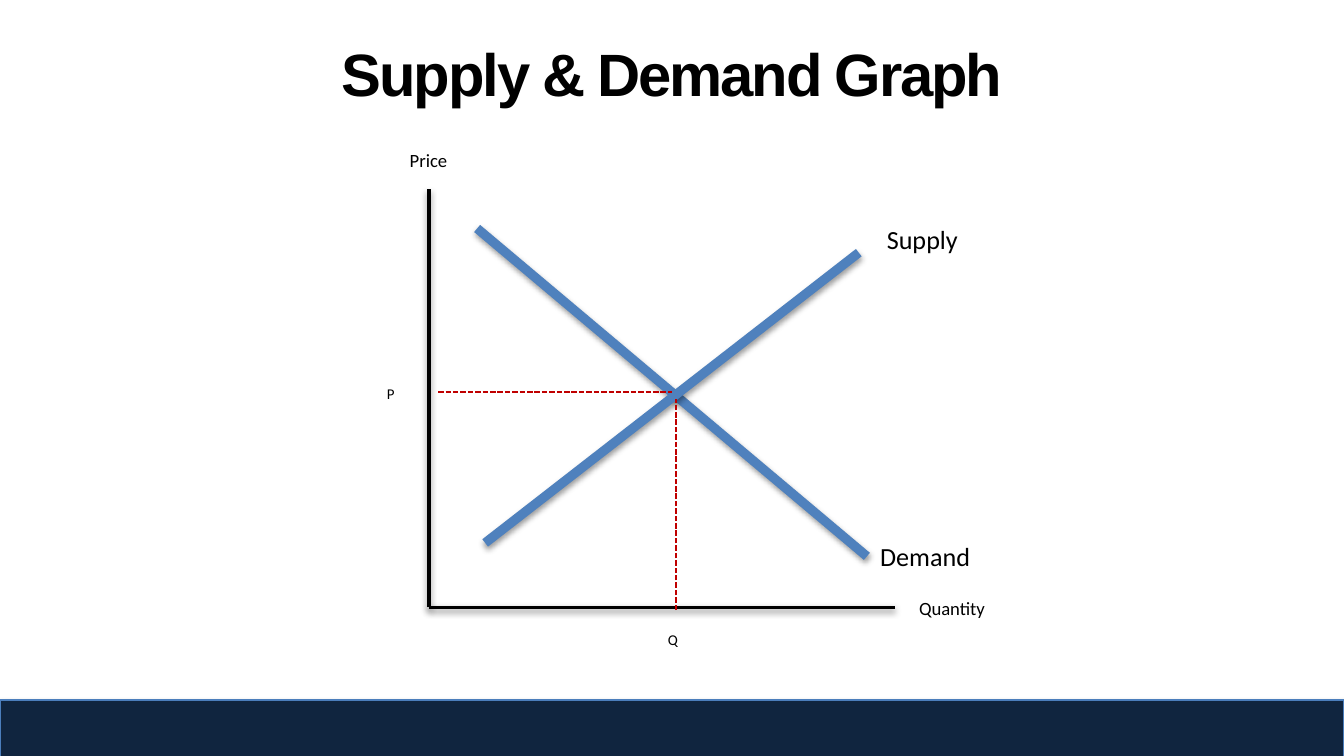
import pptx
import pptx.util
import pptx.dml.color
import pptx.enum.dml
import pptx.enum.shapes
import pptx.enum.text
import pptx.oxml
import pptx.oxml.ns

Inches = pptx.util.Inches
Pt = pptx.util.Pt


def color(hex_value):
    return pptx.dml.color.RGBColor.from_string(hex_value)


def set_shadow(part, distance=0, opacity=0):
    shadow = ""
    if opacity:
        shadow = (
            f'<a:outerShdw blurRad="{Pt(3.15)}" dist="{Pt(distance)}" dir="5400000" rotWithShape="0">'
            f'<a:srgbClr val="000000"><a:alpha val="{opacity * 1000}"/></a:srgbClr></a:outerShdw>'
        )
    namespace = pptx.oxml.ns.nsdecls("a")
    effects = pptx.oxml.parse_xml(f"<a:effectLst {namespace}>{shadow}</a:effectLst>")
    part._element.spPr.append(effects)


deck = pptx.Presentation()
deck.slide_width = Inches(10)
deck.slide_height = Inches(10 * 9 / 16)
slide = deck.slides.add_slide(deck.slide_layouts[5])

footer_band = slide.shapes.add_shape(
    pptx.enum.shapes.MSO_SHAPE.RECTANGLE, Inches(0), Inches(5.21), Inches(10), Inches(0.42)
)
footer_band.fill.solid()
footer_band.fill.fore_color.rgb = color("10253F")
footer_band.line.color.rgb = color("4B7EBC")
footer_band.line.width = Pt(0.75)
set_shadow(footer_band, 1.8, 35)

title = slide.shapes.title
title.left, title.top = Inches(0.5), Inches(0.23)
title.width, title.height = Inches(9), Inches(0.94)
title_frame = title.text_frame
title_frame.auto_size = pptx.enum.text.MSO_AUTO_SIZE.NONE
title_frame.vertical_anchor = pptx.enum.text.MSO_ANCHOR.TOP
title_frame.margin_left = title_frame.margin_right = Inches(0.07)
title_frame.margin_top = title_frame.margin_bottom = Inches(0.04)
title_frame.paragraphs[0].alignment = pptx.enum.text.PP_ALIGN.CENTER
heading = title_frame.paragraphs[0].add_run()
heading.text = "Supply & Demand Graph"
heading.font.name = "Arial"
heading.font.size = Pt(32)
heading.font.bold = True
heading.font.color.rgb = color("000000")
heading._r.get_or_add_rPr().set("spc", "-120")

axis = ("000000", 2, False)
curve = ("4F81BD", 5, False)
guide = ("C00000", 1, True)
graph_lines = [
    (3.19, 4.52, 6.66, 4.52, axis),
    (3.19, 1.41, 3.19, 4.52, axis),
    (3.55, 1.7, 6.45, 4.14, curve),
    (6.39, 1.88, 3.61, 4.04, curve),
    (3.26, 2.92, 5, 2.92, guide),
    (5.03, 4.54, 5.03, 2.97, guide),
]
for x1, y1, x2, y2, (line_color, width, dashed) in graph_lines:
    graph_line = slide.shapes.add_connector(
        pptx.enum.shapes.MSO_CONNECTOR.STRAIGHT, Inches(x1), Inches(y1), Inches(x2), Inches(y2)
    )
    graph_line.line.color.rgb = color(line_color)
    graph_line.line.width = Pt(width)
    if dashed:
        graph_line.line.dash_style = pptx.enum.dml.MSO_LINE.SQUARE_DOT
        set_shadow(graph_line)
    else:
        set_shadow(graph_line, 1.6, 38)

labels = [
    ("Quantity", 6.74, 4.39, 0.7, 0.27, 10),
    ("Price", 2.95, 1.06, 0.48, 0.27, 10),
    ("Supply", 6.5, 1.61, 0.74, 0.34, 14),
    ("Demand", 6.45, 3.97, 0.88, 0.34, 14),
    ("P", 2.78, 2.81, 0.26, 0.24, 8),
    ("Q", 4.87, 4.64, 0.28, 0.24, 8),
]
for wording, left, top, width, height, size in labels:
    label = slide.shapes.add_textbox(Inches(left), Inches(top), Inches(width), Inches(height))
    label.text_frame.word_wrap = False
    label.text_frame.auto_size = pptx.enum.text.MSO_AUTO_SIZE.SHAPE_TO_FIT_TEXT
    label_run = label.text_frame.paragraphs[0].add_run()
    label_run.text = wording
    label_run.font.name = "Calibri"
    label_run.font.size = Pt(size)
    label_run.font.color.rgb = color("000000")

deck.save("out.pptx")
